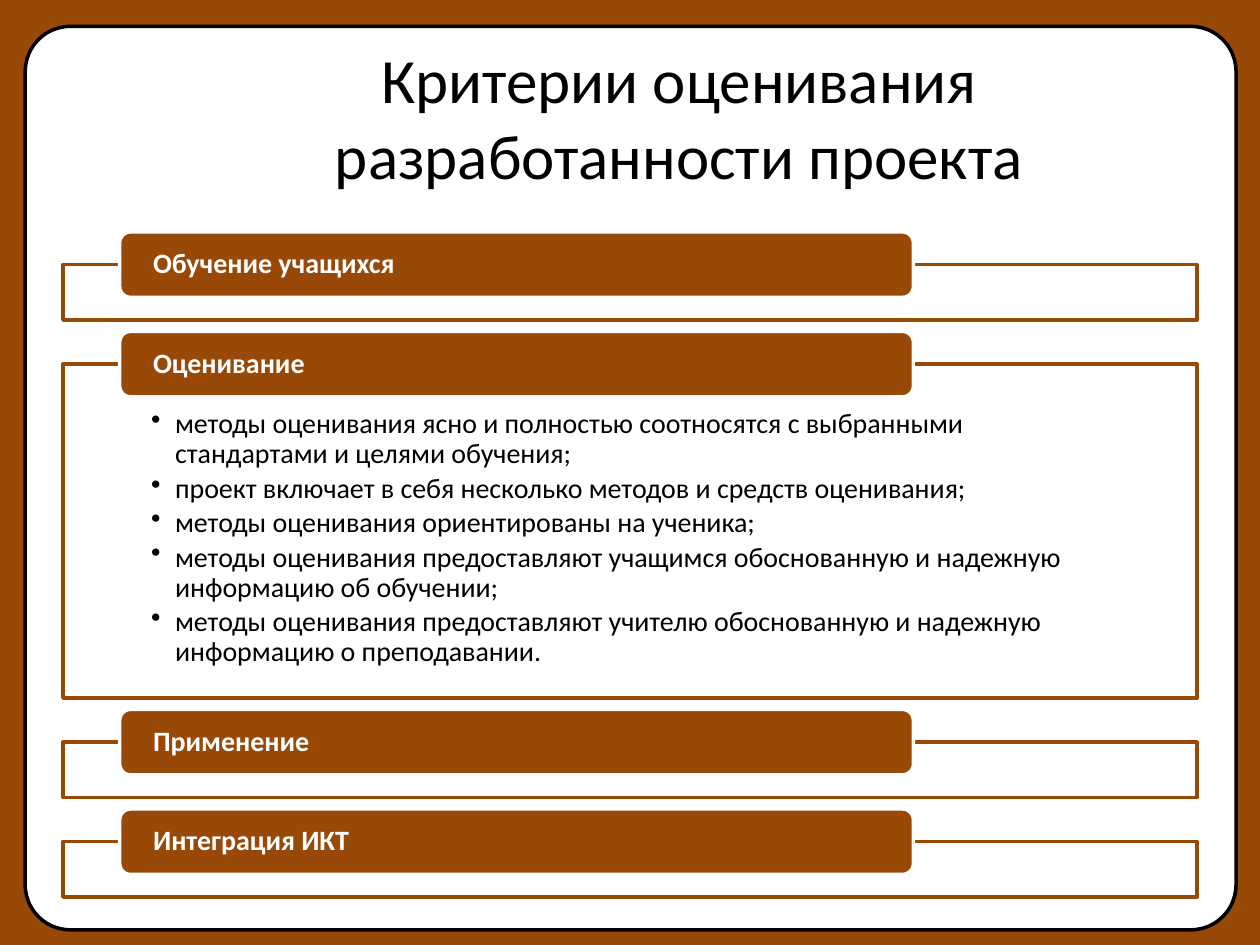
from pptx import Presentation
from pptx.dml.color import RGBColor
from pptx.enum.shapes import MSO_SHAPE
from pptx.enum.text import MSO_ANCHOR, PP_ALIGN
from pptx.oxml.ns import qn
from pptx.util import Inches, Pt
from lxml import etree

RECT, ROUNDED = MSO_SHAPE.RECTANGLE, MSO_SHAPE.ROUNDED_RECTANGLE
TOP, MIDDLE = MSO_ANCHOR.TOP, MSO_ANCHOR.MIDDLE
LEFT, CENTER = PP_ALIGN.LEFT, PP_ALIGN.CENTER

# Content
TITLE = "Критерии оценивания разработанности проекта"
CRITERIA = [
    ("Обучение учащихся", []),
    ("Оценивание", [
        "методы оценивания ясно и полностью соотносятся с выбранными стандартами и целями обучения;",
        "проект включает в себя несколько методов и средств оценивания;",
        "методы оценивания ориентированы на ученика;",
        "методы оценивания предоставляют учащимся обоснованную и надежную информацию об обучении;",
        "методы оценивания предоставляют учителю обоснованную и надежную информацию о преподавании.",
    ]),
    ("Применение", []),
    ("Интеграция ИКТ", []),
]

THEME = {
    "font": "Calibri",
    "brown": RGBColor(0x98, 0x48, 0x07),
    "white": RGBColor(0xFF, 0xFF, 0xFF),
    "black": RGBColor(0, 0, 0),
    "title": Pt(36),
    "body": Pt(16),
    "line": Pt(2),
}

# Layout, in inches
FRAME_LEFT, FRAME_WIDTH, FIRST_TOP = 0.5, 9, 2.1
EMPTY_HEIGHT, LIST_HEIGHT, GAP = 0.44, 2.65, 0.35
HEADER_LEFT, HEADER_WIDTH, HEADER_HEIGHT = 0.95, 6.3, 0.52
BULLET_INDENT = Inches(0.19)


def add_box(slide, preset, box, fill, line):
    shape = slide.shapes.add_shape(preset, *map(Inches, box))
    shape.shadow.inherit = False
    shape.fill.solid()
    shape.fill.fore_color.rgb = THEME[fill]
    shape.line.color.rgb = THEME[line]
    shape.line.width = THEME["line"]
    return shape


def set_frame(shape, anchor, insets):
    frame = shape.text_frame
    frame.word_wrap = True
    frame.vertical_anchor = anchor
    (frame.margin_left, frame.margin_top,
     frame.margin_right, frame.margin_bottom) = map(Inches, insets)
    return frame


def write(paragraph, text, size, color, align=LEFT, bold=False):
    paragraph.alignment = align
    run = paragraph.add_run()
    run.text = text
    run.font.name = THEME["font"]
    run.font.size = THEME[size]
    run.font.color.rgb = THEME[color]
    run.font.bold = bold


def add_bullet(paragraph):
    properties = paragraph._p.get_or_add_pPr()
    properties.set("marL", str(BULLET_INDENT))
    properties.set("indent", str(-BULLET_INDENT))
    etree.SubElement(properties, qn("a:buChar")).set("char", "•")


def add_criterion(slide, heading, points, top, height):
    # Outlined frame with its list
    body = add_box(slide, RECT, (FRAME_LEFT, top, FRAME_WIDTH, height), "white", "brown")
    if points:
        frame = set_frame(body, TOP, (0.7, 0.36, 0.7, 0.12))
        for index, point in enumerate(points):
            paragraph = frame.add_paragraph() if index else frame.paragraphs[0]
            write(paragraph, point, "body", "black")
            paragraph.line_spacing = 0.9
            paragraph.space_after = Pt(2.4)
            add_bullet(paragraph)

    # Heading centred on the frame's top edge
    header = add_box(slide, ROUNDED, (HEADER_LEFT, top - HEADER_HEIGHT / 2,
                                      HEADER_WIDTH, HEADER_HEIGHT), "brown", "white")
    paragraph = set_frame(header, MIDDLE, (0.24, 0, 0.24, 0)).paragraphs[0]
    write(paragraph, heading, "body", "white", bold=True)
    paragraph.line_spacing = 0.9


def main():
    deck = Presentation()
    deck.slide_width, deck.slide_height = Inches(10), Inches(7.5)
    slide = deck.slides.add_slide(deck.slide_layouts[6])

    # Background and panel
    slide.background.fill.solid()
    slide.background.fill.fore_color.rgb = THEME["brown"]
    panel = add_box(slide, ROUNDED, (0.2, 0.21, 9.61, 7.17), "white", "black")
    panel.adjustments[0] = 0.05

    # Title
    title = slide.shapes.add_textbox(*map(Inches, (1.28, 0.3, 8.22, 1.25)))
    frame = set_frame(title, MIDDLE, (0.1, 0.05, 0.1, 0.05))
    write(frame.paragraphs[0], TITLE, "title", "black", CENTER)

    # Criteria, stacked with equal gaps
    top = FIRST_TOP
    for heading, points in CRITERIA:
        height = LIST_HEIGHT if points else EMPTY_HEIGHT
        add_criterion(slide, heading, points, top, height)
        top += height + GAP

    deck.save("out.pptx")


if __name__ == "__main__":
    main()
